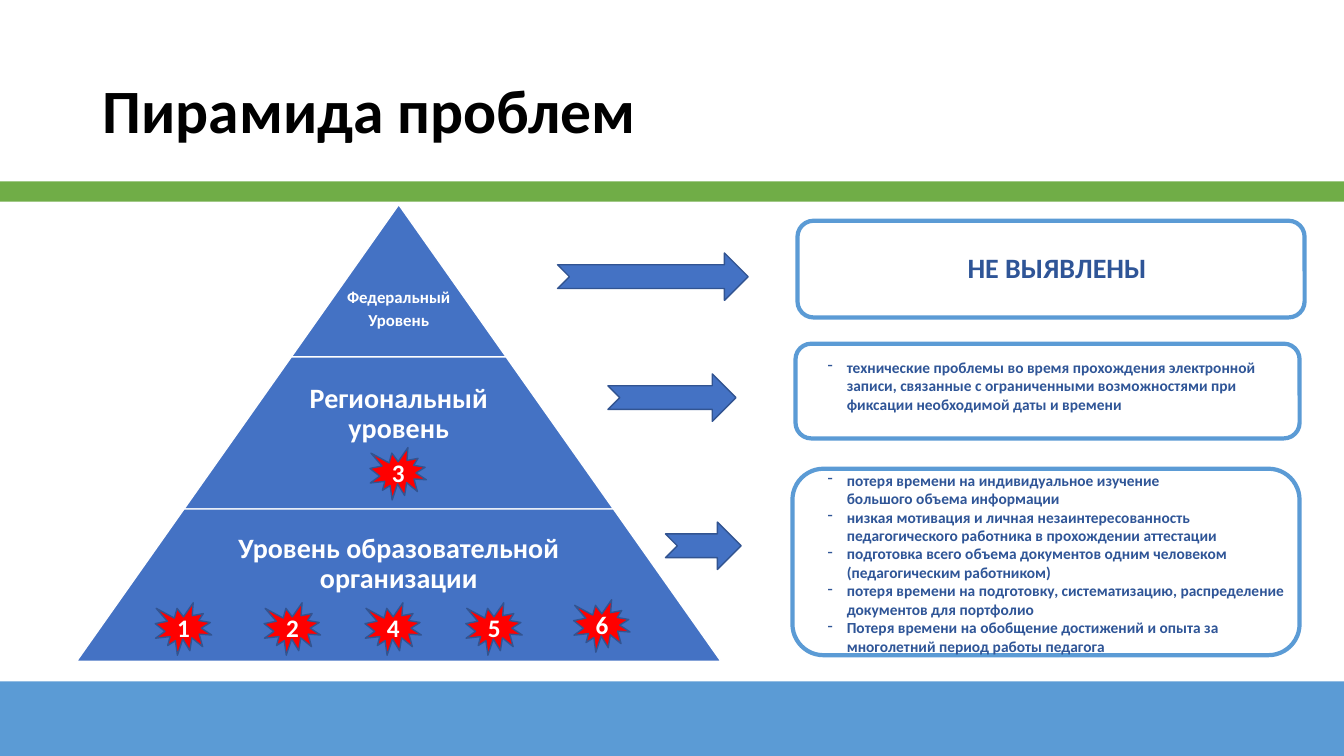
from lxml import etree
from pptx import Presentation
from pptx import util as u
from pptx.dml.color import RGBColor
from pptx.enum import shapes, text
from pptx.oxml.ns import qn

PX = 9144  # EMU in one px, 100 px to the inch
WIDE, HIGH = 1333, 750
HUES = {
    "blue": "4472C4", "sky": "5B9BD5", "green": "70AD47", "red": "FF0000",
    "edge": "325491", "ink": "2F5597", "white": "FFFFFF", "black": "000000",
}
SHAPE = shapes.MSO_SHAPE
ALIGN = text.PP_ALIGN
MID, TOP = text.MSO_ANCHOR.MIDDLE, text.MSO_ANCHOR.TOP


def hue(name):
    return RGBColor.from_string(HUES[name])


def place(*box):
    return [u.Emu(round(n * PX)) for n in box]


def draw(slide, kind, box, fill=None, line=None, width=1):
    shape = slide.shapes.add_shape(kind, *place(*box))
    shape.shadow.inherit = False
    if fill:
        shape.fill.solid()
        shape.fill.fore_color.rgb = hue(fill)
    else:
        shape.fill.background()
    if line:
        shape.line.color.rgb = hue(line)
        shape.line.width = u.Pt(width)
    else:
        shape.line.fill.background()
    return shape


def style(part, size, color, align=ALIGN.CENTER):
    part.alignment = align
    for run in part.runs:
        font = run.font
        font.name, font.size, font.bold = "Calibri", u.Pt(size), True
        font.color.rgb = hue(color)


def write(slide, box, lines, size, color, anchor=MID, align=ALIGN.CENTER):
    frame = slide.shapes.add_textbox(*place(*box)).text_frame
    frame.word_wrap = True
    frame.vertical_anchor = anchor
    frame.text = "\n".join(lines)
    for part in frame.paragraphs:
        style(part, size, color, align)
    return frame


def dash(part):
    """Give a paragraph a hanging dash bullet."""
    props = part._p.get_or_add_pPr()
    props.set("marL", str(19 * PX))
    props.set("indent", str(-19 * PX))
    etree.SubElement(props, qn("a:buChar")).set("char", "-")


def header(slide, box):
    title = slide.shapes.title
    title.left, title.top, title.width, title.height = place(*box)
    title.text_frame.text = "Пирамида проблем"
    title.text_frame.vertical_anchor = MID
    part = title.text_frame.paragraphs[0]
    part.line_spacing = 0.9
    style(part, 44, "black", ALIGN.LEFT)


def bars(slide):
    draw(slide, SHAPE.RECTANGLE, (0, 676, WIDE, HIGH - 676), "sky")
    draw(slide, SHAPE.RECTANGLE, (0, 180, WIDE, 20), "green")


def pyramid(slide, box):
    left, top, wide, high = box
    step = high / 3
    # lines, size, text middle below the tier's top, text width
    tiers = [
        (["Федеральный", "Уровень"], 12, 104, 213),
        (["Региональный уровень"], 20, 57, 277),
        (["Уровень образовательной организации"], 20, 55, 415),
    ]
    for i, (lines, size, mid, room) in enumerate(tiers):
        base, y = wide * (i + 1) / 3, top + i * step
        tier = draw(slide, SHAPE.TRAPEZOID,
                    (left + (wide - base) / 2, y, base, step), "blue", "white")
        tier.adjustments[0] = wide / 6 / step
        frame = write(slide, (left + (wide - room) / 2, y + mid - 35, room, 70),
                      lines, size, "white")
        frame.margin_left = frame.margin_right = u.Emu(3 * PX)
        for part in frame.paragraphs:
            part.line_spacing = 0.9
        for part in frame.paragraphs[1:]:
            part.space_before = u.Pt(4)
    seals(slide, left, top)


def seals(slide, left, top):
    spots = [(78, 395), (186, 395), (291, 241), (286, 395), (386, 395), (493, 392)]
    for num, (x, y) in enumerate(spots, 1):
        seal = draw(slide, SHAPE.EXPLOSION1, (left + x, top + y, 56, 52),
                    "red", "edge")
        seal.text_frame.text = str(num)
        seal.text_frame.vertical_anchor = MID
        style(seal.text_frame.paragraphs[0], 18, "white")


def arrows(slide):
    for box in [(553, 251, 189, 47), (603, 371, 127, 47), (660, 518, 75, 47)]:
        draw(slide, SHAPE.NOTCHED_RIGHT_ARROW, box, "blue", "edge")


def panel(slide, box):
    draw(slide, SHAPE.ROUNDED_RECTANGLE, box, None, "sky", 3)


def verdict(slide, box):
    panel(slide, box)
    left, top, wide, high = box
    write(slide, (left + 49, top + 24, 417, 44), ["НЕ ВЫЯВЛЕНЫ"], 20, "ink")


def issues(slide, box, inner, lines):
    """Draw a panel with a dashed list; inner is the list's offset and size."""
    panel(slide, box)
    x, y, wide, high = inner
    frame = write(slide, (box[0] + x, box[1] + y, wide, high), lines, 11, "ink",
                  TOP, ALIGN.LEFT)
    for part in frame.paragraphs:
        dash(part)


def main():
    deck = Presentation()
    deck.slide_width, deck.slide_height = place(WIDE, HIGH)
    slide = deck.slides.add_slide(deck.slide_layouts[5])
    bars(slide)
    header(slide, (92, 40, 1150, 145))
    pyramid(slide, (76, 203, 639, 453))
    arrows(slide)
    verdict(slide, (791, 219, 503, 96))
    issues(slide, (789, 341, 500, 94), (22, 9, 465, 66), [
        "технические проблемы во время прохождения электронной\v"
        "записи, связанные с ограниченными возможностями при\v"
        "фиксации необходимой даты и времени",
    ])
    issues(slide, (786, 465, 503, 185), (25, -3, 478, 193), [
        "потеря времени на индивидуальное изучение\v"
        "большого объема информации",
        "низкая мотивация и личная незаинтересованность\v"
        "педагогического работника в прохождении аттестации",
        "подготовка всего объема документов одним человеком "
        "(педагогическим работником)",
        "потеря времени на подготовку, систематизацию, распределение "
        "документов для портфолио",
        "Потеря времени на обобщение достижений и опыта за "
        "многолетний период работы педагога",
    ])
    deck.save("out.pptx")


if __name__ == "__main__":
    main()
